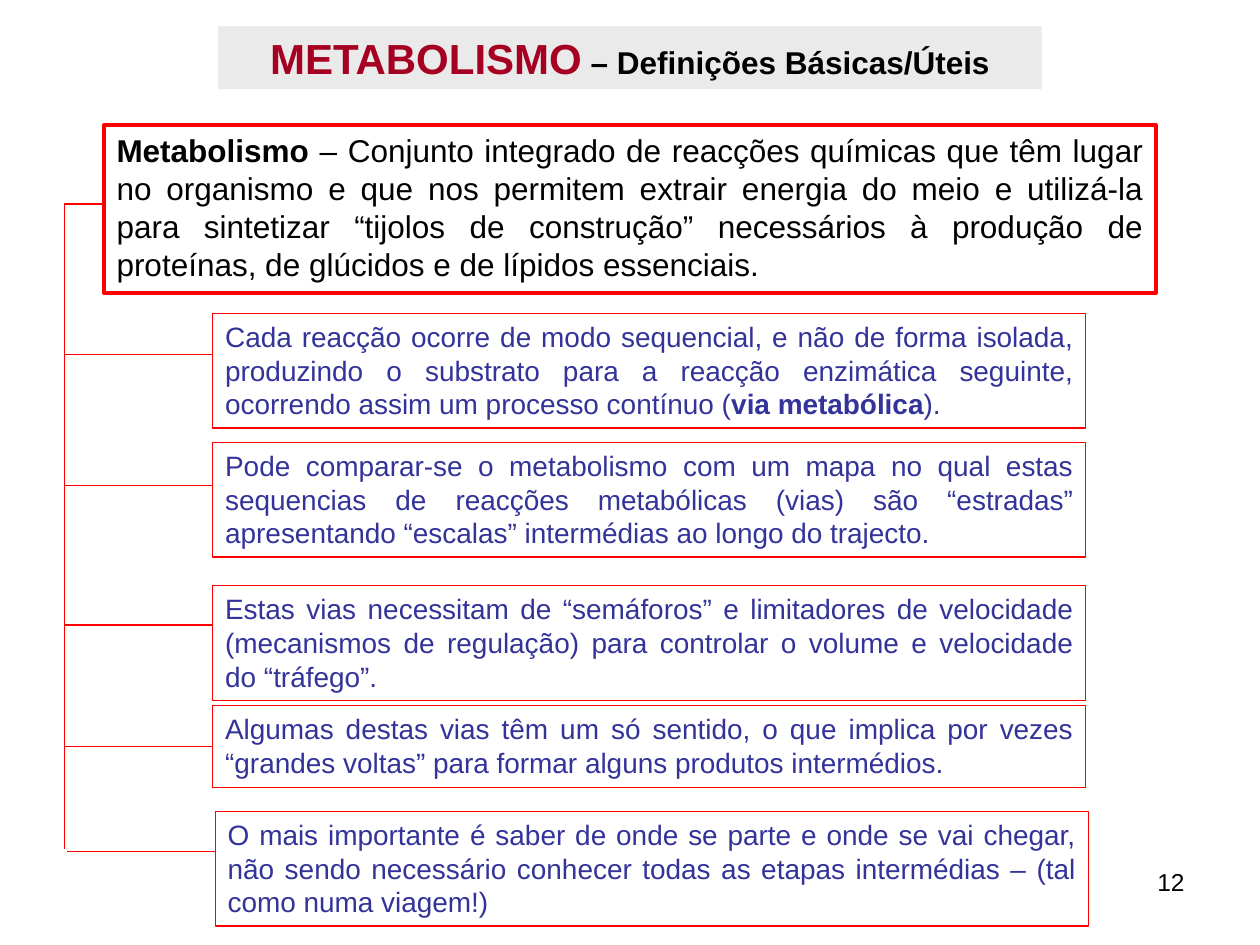
from dataclasses import dataclass

from lxml import etree
from pptx import Presentation
from pptx.dml.color import RGBColor
from pptx.enum import shapes, text
from pptx.oxml import ns
from pptx.util import Cm, Pt


@dataclass(frozen=True)
class Theme:
    font: str = "Arial"
    black: str = "000000"
    title: str = "A50021"
    band: str = "EAEAEA"
    line: str = "FF0000"
    note: str = "333399"
    title_size: float = 24
    body_size: float = 18
    note_size: float = 16
    number_size: float = 14
    thin: float = 0.75
    thick: float = 2.25


T = Theme()
ALIGN = text.PP_ALIGN

TRUNK_X, TRUNK_TOP, TRUNK_BOTTOM = 1.3, 4.11, 17.12
NOTE_LEFT, NOTE_WIDTH = 4.29, 17.6
THREE_LINES, TWO_LINES = 2.31, 1.65

# (top, height, shift to the right, branch distance below top, runs);
# a branch distance of None means the middle of the side
NOTES = [
    (6.32, THREE_LINES, 0, 0.82, [
        ("Cada reacção ocorre de modo sequencial, e não de forma isolada, "
         "produzindo o substrato para a reacção enzimática seguinte, "
         "ocorrendo assim um processo contínuo (", {}),
        ("via metabólica", {"bold": True}),
        (").", {})]),
    (8.92, THREE_LINES, 0, 0.86, [
        ("Pode comparar-se o metabolismo com um mapa no qual estas "
         "sequencias de reacções metabólicas (vias) são “estradas” "
         "apresentando “escalas” intermédias ao longo do trajecto.", {})]),
    (11.81, THREE_LINES, 0, 0.79, [
        ("Estas vias necessitam de “semáforos” e limitadores de velocidade "
         "(mecanismos de regulação) para controlar o volume e velocidade "
         "do “tráfego”.", {})]),
    (14.22, TWO_LINES, 0, None, [
        ("Algumas destas vias têm um só sentido, o que implica por vezes "
         "“grandes voltas” para formar alguns produtos intermédios.", {})]),
    (16.36, THREE_LINES, 0.05, 0.81, [
        ("O mais importante é saber de onde se parte e onde se vai chegar, "
         "não sendo necessário conhecer todas as etapas intermédias – (tal "
         "como numa viagem!)", {})]),
]


def add_run(p, words, size=T.body_size, color=T.black, bold=False):
    r = p.add_run()
    r.text = words
    r.font.name = T.font
    r.font.size = Pt(size)
    r.font.bold = bold
    r.font.color.rgb = RGBColor.from_string(color)


def write(sp, runs, align=ALIGN.JUSTIFY, **defaults):
    """Fill a shape with one paragraph; each run may override the defaults."""
    tf = sp.text_frame
    tf.word_wrap = True
    tf.vertical_anchor = text.MSO_ANCHOR.TOP
    p = tf.paragraphs[0]
    p.alignment = align
    for words, fmt in runs:
        add_run(p, words, **{**defaults, **fmt})


def add_box(s, box, fill=None, line=None, width=T.thin):
    sp = s.shapes.add_shape(shapes.MSO_SHAPE.RECTANGLE, *map(Cm, box))
    sp.shadow.inherit = False
    if fill:
        sp.fill.solid()
        sp.fill.fore_color.rgb = RGBColor.from_string(fill)
    else:
        sp.fill.background()
    if line:
        sp.line.color.rgb = RGBColor.from_string(line)
        sp.line.width = Pt(width)
    else:
        sp.line.fill.background()
    return sp


def add_line(s, x1, y1, x2, y2):
    c = s.shapes.add_connector(shapes.MSO_CONNECTOR.STRAIGHT,
                               *map(Cm, (x1, y1, x2, y2)))
    c.line.color.rgb = RGBColor.from_string(T.line)
    c.line.width = Pt(T.thin)
    etree.SubElement(c._element.spPr, ns.qn("a:effectLst"))
    return c


def add_title(s, box):
    write(add_box(s, box, fill=T.band), [
        ("METABOLISMO", {"size": T.title_size, "color": T.title}),
        (" – Definições Básicas/Úteis", {}),
    ], align=ALIGN.CENTER, bold=True)


def add_definition(s, box):
    write(add_box(s, box, line=T.line, width=T.thick), [
        ("Metabolismo", {"bold": True}),
        (" – Conjunto integrado de reacções químicas que têm lugar no "
         "organismo e que nos permitem extrair energia do meio e utilizá-la "
         "para sintetizar “tijolos de construção” necessários à produção de "
         "proteínas, de glúcidos e de lípidos essenciais.", {}),
    ])
    add_line(s, box[0], TRUNK_TOP, TRUNK_X, TRUNK_TOP)


def add_note(s, box, trunk_x, drop, runs):
    """Draw a note and the branch that ties it to the trunk."""
    left, top, _, height = box
    sp = add_box(s, box, line=T.line)
    write(sp, runs, size=T.note_size, color=T.note)
    y = top + (height / 2 if drop is None else drop)
    branch = add_line(s, trunk_x, y, left, y)
    if drop is None:
        branch.end_connect(sp, 1)


def add_number(s, box):
    sp = s.shapes.add_textbox(*map(Cm, box))
    write(sp, [("12", {})], align=ALIGN.RIGHT, size=T.number_size)


def main():
    prs = Presentation()
    prs.slide_width, prs.slide_height = Cm(25.4), Cm(19.05)
    s = prs.slides.add_slide(prs.slide_layouts[6])
    add_number(s, (18.21, 17.35, 5.92, 1.32))
    add_title(s, (4.4, 0.53, 16.6, 1.27))
    add_definition(s, (2.1, 2.52, 21.2, 3.39))
    add_line(s, TRUNK_X, TRUNK_TOP, TRUNK_X, TRUNK_BOTTOM)
    for top, height, shift, drop, runs in NOTES:
        box = (NOTE_LEFT + shift, top, NOTE_WIDTH, height)
        add_note(s, box, TRUNK_X + shift, drop, runs)
    prs.save("out.pptx")


if __name__ == "__main__":
    main()
